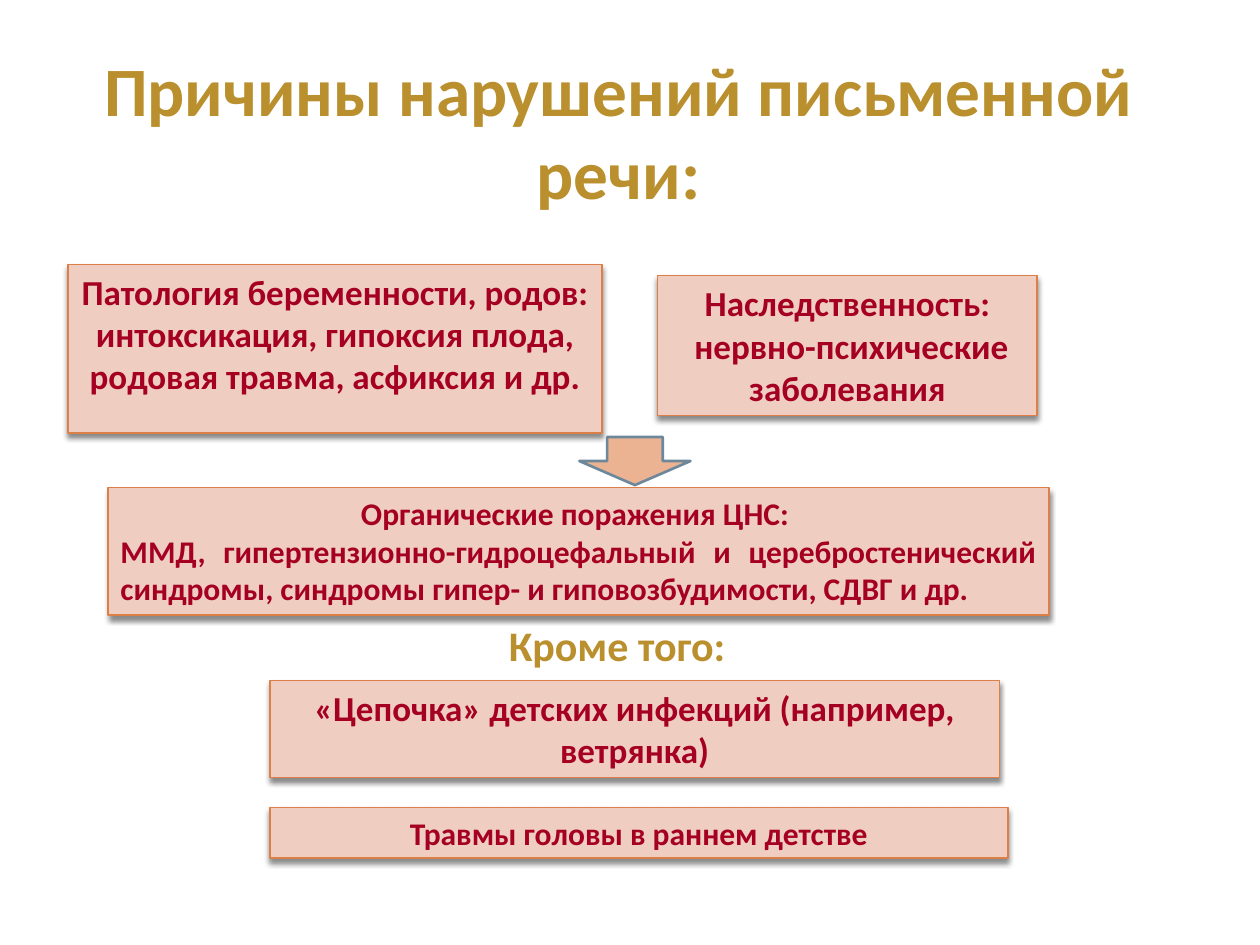
import dataclasses

import lxml.etree
import pptx
import pptx.dml.color
import pptx.enum.shapes
import pptx.enum.text
import pptx.oxml.ns
import pptx.util

Cm = pptx.util.Cm
Pt = pptx.util.Pt
RGB = pptx.dml.color.RGBColor.from_string
ALIGN = pptx.enum.text.PP_ALIGN
ANCHOR = pptx.enum.text.MSO_ANCHOR
SHAPE = pptx.enum.shapes.MSO_SHAPE


@dataclasses.dataclass(frozen=True)
class Theme:
    font: str = "Calibri"
    gold: str = "BA8F2D"
    crimson: str = "A50021"
    box_fill: str = "EFCDC1"
    box_line: str = "DD8047"
    arrow_fill: str = "EBB391"
    arrow_line: str = "6D879B"
    shadow: str = "000000"
    title: float = 39.6
    subtitle: float = 24
    cause: float = 20
    detail: float = 18


class SlideBuilder:
    def __init__(self, slide, theme):
        self.s = slide
        self.theme = theme

    def set_text(self, sp, lines, size, color, anchor=ANCHOR.TOP):
        """Fill sp with paragraphs given as (text, alignment) pairs."""
        tf = sp.text_frame
        tf.word_wrap = True
        tf.vertical_anchor = anchor
        for i, (text, align) in enumerate(lines):
            p = tf.add_paragraph() if i else tf.paragraphs[0]
            p.text = text
            p.alignment = align
            p.font.name = self.theme.font
            p.font.size = Pt(size)
            p.font.bold = True
            p.font.color.rgb = RGB(color)

    def shape(self, kind, at, fill, line, width):
        sp = self.s.shapes.add_shape(kind, *map(Cm, at))
        sp.shadow.inherit = False
        sp.fill.solid()
        sp.fill.fore_color.rgb = RGB(fill)
        sp.line.color.rgb = RGB(line)
        sp.line.width = Pt(width)
        return sp

    def drop_shadow(self, sp):
        qn = pptx.oxml.ns.qn
        effects = sp._element.spPr.find(qn("a:effectLst"))
        shadow = lxml.etree.SubElement(
            effects, qn("a:outerShdw"), blurRad=str(Pt(3)), dist=str(Pt(2.4)),
            dir="5400000", algn="ctr", rotWithShape="0")
        color = lxml.etree.SubElement(shadow, qn("a:srgbClr"), val=self.theme.shadow)
        lxml.etree.SubElement(color, qn("a:alpha"), val="45000")

    def heading(self, text, at, size, anchor=ANCHOR.TOP):
        sp = self.s.shapes.add_textbox(*map(Cm, at))
        self.set_text(sp, [(text, ALIGN.CENTER)], size, self.theme.gold, anchor)

    def box(self, at, size, *lines):
        t = self.theme
        sp = self.shape(SHAPE.RECTANGLE, at, t.box_fill, t.box_line, 0.79)
        self.drop_shadow(sp)
        self.set_text(sp, lines, size, t.crimson)

    def down_arrow(self, at):
        t = self.theme
        self.shape(SHAPE.DOWN_ARROW, at, t.arrow_fill, t.arrow_line, 1.5)


def main():
    prs = pptx.Presentation()
    prs.slide_width, prs.slide_height = Cm(25.4), Cm(19.05)
    t = Theme()
    b = SlideBuilder(prs.slides.add_slide(prs.slide_layouts[6]), t)

    b.heading("Причины нарушений письменной речи:",
              (1.37, 1.45, 22.2, 2.36), t.title, ANCHOR.MIDDLE)
    b.box((1.37, 5.33, 10.77, 3.4), t.cause,
          ("Патология беременности, родов: интоксикация, гипоксия плода, "
           "родовая травма, асфиксия и др.", ALIGN.CENTER))
    b.box((13.26, 5.56, 7.65, 2.82), t.cause,
          ("Наследственность:", ALIGN.CENTER),
          (" нервно-психические заболевания", ALIGN.CENTER))
    b.down_arrow((11.68, 8.81, 2.24, 0.97))
    b.box((2.18, 9.83, 18.97, 2.57), t.detail,
          ("Органические поражения ЦНС: ", ALIGN.CENTER),
          ("ММД, гипертензионно-гидроцефальный и церебростенический синдромы, "
           "синдромы гипер- и гиповозбудимости, СДВГ и др.", ALIGN.JUSTIFY))
    b.heading("Кроме того:", (2.51, 12.37, 19.86, 1.27), t.subtitle)
    b.box((5.44, 13.72, 14.71, 1.96), t.cause,
          ("«Цепочка» детских инфекций (например, ветрянка)", ALIGN.CENTER))
    b.box((5.44, 16.28, 14.88, 1.02), t.detail,
          ("Травмы головы в раннем детстве", ALIGN.CENTER))

    prs.save("out.pptx")


if __name__ == "__main__":
    main()
